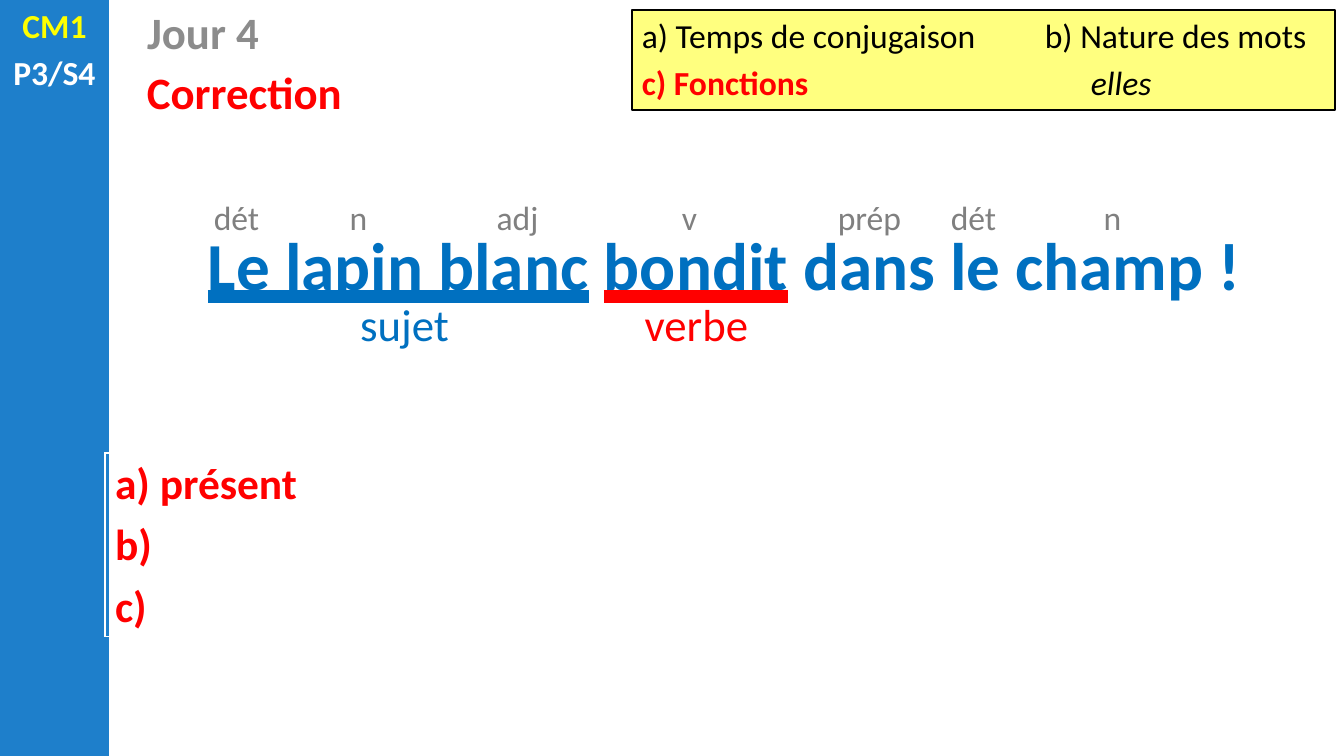
from lxml.etree import SubElement
from pptx import Presentation
from pptx.dml.color import RGBColor
from pptx.enum.shapes import MSO_SHAPE
from pptx.enum.text import MSO_ANCHOR, MSO_UNDERLINE, PP_ALIGN
from pptx.oxml.ns import qn
from pptx.util import Pt

SCALE = 9071
FONT = "Calibri"
RED, BLUE, GREY, BLACK = "FF0000", "0070C0", "808080", "000000"


def px(length):
    return length * SCALE


def color(code):
    return RGBColor.from_string(code)


def add_span(para, text, size=24, ink=BLACK, bold=False, italic=False, underline=None):
    span = para.add_run()
    span.text = text
    font = span.font
    font.name, font.size = FONT, Pt(size)
    font.bold, font.italic = bold, italic
    font.color.rgb = color(ink)
    if underline:
        font.underline = MSO_UNDERLINE.HEAVY_LINE
        line_fill = SubElement(SubElement(span._r.rPr, qn("a:uFill")), qn("a:solidFill"))
        SubElement(line_fill, qn("a:srgbClr"), val=underline)
        latin = span._r.rPr.find(qn("a:latin"))
        span._r.rPr.append(latin)
    return span


def prepare(frame):
    frame.word_wrap = True
    frame.vertical_anchor = MSO_ANCHOR.TOP
    return frame


def add_label(page, box, text="", align=PP_ALIGN.CENTER, **style):
    frame = prepare(page.shapes.add_textbox(*map(px, box)).text_frame)
    para = frame.paragraphs[0]
    para.alignment = align
    if text:
        add_span(para, text, **style)
    return frame


def next_para(frame, align):
    para = frame.add_paragraph()
    para.alignment = align
    para.space_before = Pt(4.8)
    return para


def add_panel(page, box, fill):
    panel = page.shapes.add_shape(MSO_SHAPE.RECTANGLE, *map(px, box))
    panel.shadow.inherit = False
    panel.fill.solid()
    panel.fill.fore_color.rgb = color(fill)
    panel.line.fill.background()
    return panel


def draw_sidebar(page, box):
    left, top, width, height = box
    add_panel(page, box, "1E7FCB")
    frame = add_label(page, (left, top, width, 100), "CM1", ink="FFFF00", bold=True)
    add_span(next_para(frame, PP_ALIGN.CENTER), "P3/S4", ink="FFFFFF", bold=True)


def draw_heading(page, box):
    left, top, width, height = box
    title = page.shapes.title
    title.left, title.top, title.width, title.height = map(px, (left, top, width, height))
    frame = prepare(title.text_frame)
    para = frame.paragraphs[0]
    para.alignment = PP_ALIGN.LEFT
    add_span(para, "Jour 4", size=32, ink="8C8C8C", bold=True)
    add_label(page, (left, top + 60, 487, height), "Correction",
              align=PP_ALIGN.LEFT, size=32, ink=RED, bold=True)


def set_tab(para, position):
    tabs = SubElement(para._p.get_or_add_pPr(), qn("a:tabLst"))
    SubElement(tabs, qn("a:tab"), pos=str(px(position)), algn="l")


def draw_instructions(page, box):
    panel = add_panel(page, box, "FFFF00")
    tint = panel.fill._xPr.find(qn("a:solidFill")).find(qn("a:srgbClr"))
    SubElement(tint, qn("a:alpha"), val="50000")
    panel.line.color.rgb = color(BLACK)
    panel.line.width = Pt(1.5)
    frame = prepare(panel.text_frame)
    first = frame.paragraphs[0]
    first.alignment = PP_ALIGN.LEFT
    set_tab(first, 403)
    add_span(first, "a) Temps de conjugaison\tb) Nature des mots")
    second = next_para(frame, PP_ALIGN.LEFT)
    set_tab(second, 449)
    add_span(second, "c) Fonctions\t", ink=RED, bold=True)
    add_span(second, "elles", italic=True)


def draw_sentence(page, box):
    left, top, width, height = box
    para = add_label(page, box).paragraphs[0]
    for text, underline in (("Le lapin blanc", BLUE), (" ", None),
                            ("bondit", RED), (" dans le champ !", None)):
        add_span(para, text, size=48, ink=BLUE, bold=True, underline=underline)
    natures = (("dét", 86), ("n", 208), ("adj", 367), ("v", 539),
               ("prép", 719), ("dét", 823), ("n", 962))
    for text, offset in natures:
        add_label(page, (left + offset, top - 26, 91, 50), text, ink=GREY)
    for text, offset, ink in (("sujet", 237, BLUE), ("verbe", 529, RED)):
        add_label(page, (left + offset, top + 74, 125, 65), text, size=32, ink=ink)


def draw_answers(page, box):
    table = page.shapes.add_table(1, 1, *map(px, box)).table
    table.first_row = table.horz_banding = False
    cell = table.cell(0, 0)
    cell.fill.background()
    frame = cell.text_frame
    for index, text in enumerate(("a) présent", "b)", "c)")):
        para = frame.add_paragraph() if index else frame.paragraphs[0]
        para.space_after = Pt(6)
        add_span(para, text, size=31, ink=RED, bold=True)


def main():
    deck = Presentation()
    deck.slide_width, deck.slide_height = px(1344), px(756)
    page = deck.slides.add_slide(deck.slide_layouts[5])
    draw_sidebar(page, (0, 0, 109, 756))
    draw_heading(page, (137, 0, 797, 65))
    draw_instructions(page, (632, 10, 703, 100))
    draw_sentence(page, (105, 218, 1239, 92))
    draw_answers(page, (105, 453, 1239, 183))
    deck.save("out.pptx")


if __name__ == "__main__":
    main()
